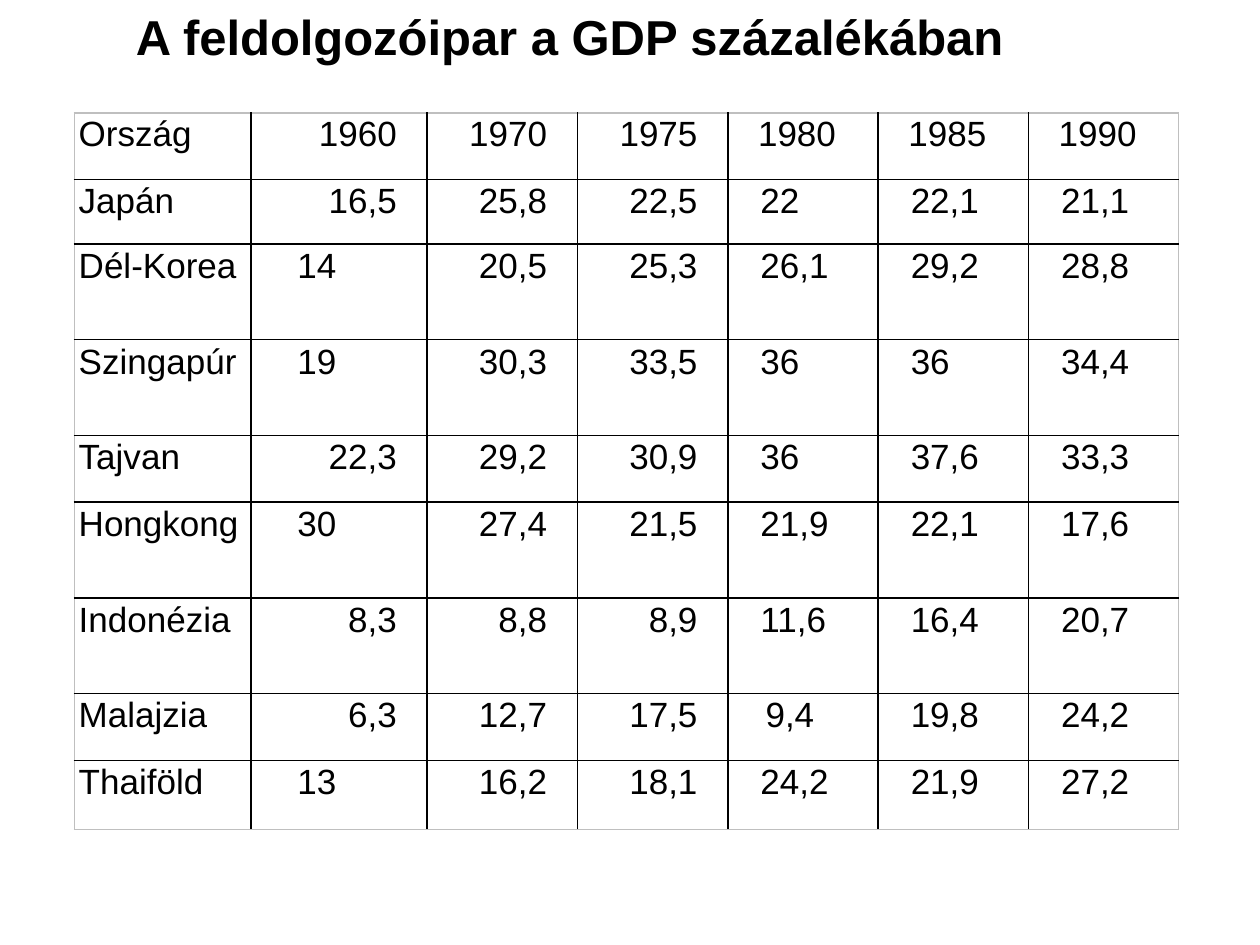
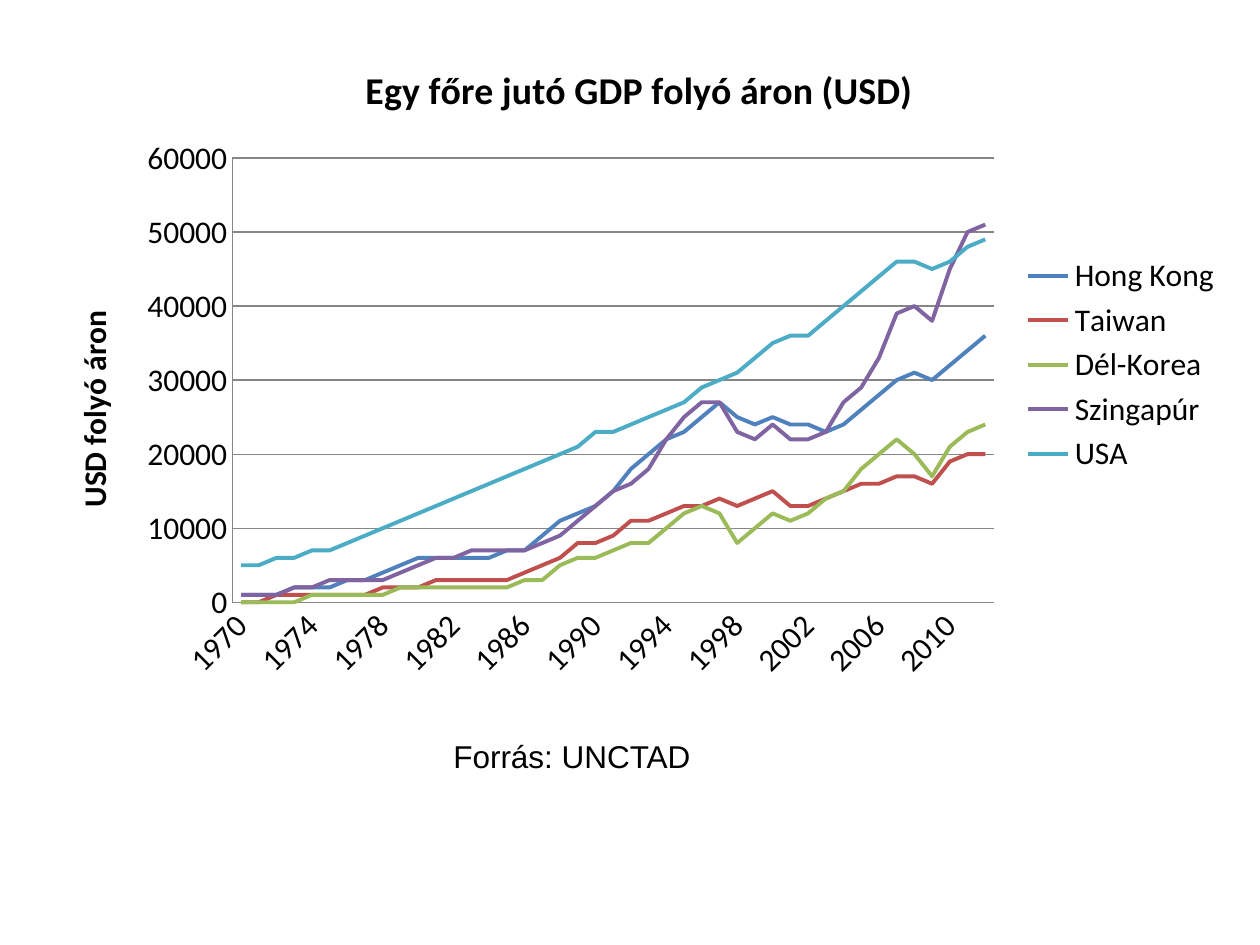
import pptx
import pptx.chart.data
import pptx.dml.color
import pptx.enum.chart
import pptx.enum.text
import pptx.oxml
import pptx.oxml.ns
import pptx.util

Pt = pptx.util.Pt
ALIGN = pptx.enum.text.PP_ALIGN
ANCHOR = pptx.enum.text.MSO_ANCHOR
BLACK, FRAME_GRAY, AXIS_GRAY = "000000", "BFBFBF", "868686"
NS = pptx.oxml.ns.nsdecls("a", "c")


def color(hex_string):
    return pptx.dml.color.RGBColor.from_string(hex_string)


def style_font(font, size, bold=False, name="Arial"):
    font.name, font.size, font.bold = name, Pt(size), bold
    font.color.rgb = color(BLACK)


presentation = pptx.Presentation()
presentation.slide_width, presentation.slide_height = Pt(720), Pt(540)

# Slide 1: manufacturing share table
share_slide = presentation.slides.add_slide(presentation.slide_layouts[5])
heading = share_slide.shapes.title
heading.left, heading.top, heading.width, heading.height = Pt(70.5), Pt(0), Pt(595.5), Pt(41)
heading.text_frame.text = "A feldolgozóipar a GDP százalékában"
heading.text_frame.vertical_anchor = ANCHOR.TOP
heading.text_frame.auto_size = pptx.enum.text.MSO_AUTO_SIZE.SHAPE_TO_FIT_TEXT
heading.text_frame.paragraphs[0].alignment = ALIGN.LEFT
style_font(heading.text_frame.paragraphs[0].runs[0].font, 28, True)

shares = [
    ["Ország", "1960", "1970", "1975", "1980", "1985", "1990"],
    ["Japán", "16,5", "25,8", "22,5", "22", "22,1", "21,1"],
    ["Dél-Korea", "14", "20,5", "25,3", "26,1", "29,2", "28,8"],
    ["Szingapúr", "19", "30,3", "33,5", "36", "36", "34,4"],
    ["Tajvan", "22,3", "29,2", "30,9", "36", "37,6", "33,3"],
    ["Hongkong", "30", "27,4", "21,5", "21,9", "22,1", "17,6"],
    ["Indonézia", "8,3", "8,8", "8,9", "11,6", "16,4", "20,7"],
    ["Malajzia", "6,3", "12,7", "17,5", "9,4", "19,8", "24,2"],
    ["Thaiföld", "13", "16,2", "18,1", "24,2", "21,9", "27,2"],
]
column_widths = [100.8] * 2 + [85.9] * 5
row_heights = [38.2, 36.7, 54.7, 54.7, 38.2, 54.7, 54.7, 38.2, 39.6]
last_row, last_column = len(shares) - 1, len(column_widths) - 1
share_table = share_slide.shapes.add_table(
    len(shares), len(column_widths), Pt(42.5), Pt(64.5),
    Pt(sum(column_widths)), Pt(sum(row_heights))).table
share_table.first_row = share_table.horz_banding = False
for column, width in zip(share_table.columns, column_widths):
    column.width = Pt(width)

for r, (height, values) in enumerate(zip(row_heights, shares)):
    share_table.rows[r].height = Pt(height)
    for c, value in enumerate(values):
        cell = share_table.cell(r, c)
        cell.text_frame.text = value
        paragraph = cell.text_frame.paragraphs[0]
        style_font(paragraph.runs[0].font, 20)
        cell.vertical_anchor = ANCHOR.TOP
        cell.margin_left = cell.margin_right = cell.margin_bottom = Pt(0)
        cell.margin_top = Pt(1 if r < 2 else 1.6)

        # Whole numbers of 1960 and all later years are indented from the left
        if c == 0:
            cell.margin_left = Pt(2.5)
        elif c == 1 and r > 0 and "," not in value:
            cell.margin_left = Pt(26.6)
        elif c <= 3:
            paragraph.alignment = ALIGN.RIGHT
            cell.margin_right = Pt(17.3)
        elif r == 0:
            cell.margin_left = Pt(17.3)
        else:
            cell.margin_left = Pt(21.6 if value == "9,4" else 18.7)

        # Black inner rules, gray outer frame
        properties = cell._tc.get_or_add_tcPr()
        outer_edges = {"L": c == 0, "R": c == last_column, "T": r == 0, "B": r == last_row}
        for side, is_outer in outer_edges.items():
            properties.append(pptx.oxml.parse_xml(
                f'<a:ln{side} {NS} w="12700"><a:solidFill>'
                f'<a:srgbClr val="{FRAME_GRAY if is_outer else BLACK}"/>'
                f'</a:solidFill></a:ln{side}>'))
        cell.fill.background()

# Slide 2: GDP per capita chart, values in thousands of USD
gdp_slide = presentation.slides.add_slide(presentation.slide_layouts[6])
gdp_series = [
    ("Hong Kong", "4F81BD",
     [1, 1, 1, 2, 2, 2, 3, 3, 4, 5, 6, 6, 6, 6, 6, 7, 7, 9, 11, 12, 13, 15, 18, 20, 22, 23,
      25, 27, 25, 24, 25, 24, 24, 23, 24, 26, 28, 30, 31, 30, 32, 34, 36]),
    ("Taiwan", "C0504D",
     [0, 0, 1, 1, 1, 1, 1, 1, 2, 2, 2, 3, 3, 3, 3, 3, 4, 5, 6, 8, 8, 9, 11, 11, 12, 13,
      13, 14, 13, 14, 15, 13, 13, 14, 15, 16, 16, 17, 17, 16, 19, 20, 20]),
    ("Dél-Korea", "9BBB59",
     [0, 0, 0, 0, 1, 1, 1, 1, 1, 2, 2, 2, 2, 2, 2, 2, 3, 3, 5, 6, 6, 7, 8, 8, 10, 12,
      13, 12, 8, 10, 12, 11, 12, 14, 15, 18, 20, 22, 20, 17, 21, 23, 24]),
    ("Szingapúr", "8064A2",
     [1, 1, 1, 2, 2, 3, 3, 3, 3, 4, 5, 6, 6, 7, 7, 7, 7, 8, 9, 11, 13, 15, 16, 18, 22, 25,
      27, 27, 23, 22, 24, 22, 22, 23, 27, 29, 33, 39, 40, 38, 45, 50, 51]),
    ("USA", "4BACC6",
     [5, 5, 6, 6, 7, 7, 8, 9, 10, 11, 12, 13, 14, 15, 16, 17, 18, 19, 20, 21, 23, 23, 24, 25,
      26, 27, 29, 30, 31, 33, 35, 36, 36, 38, 40, 42, 44, 46, 46, 45, 46, 48, 49]),
]
gdp_data = pptx.chart.data.CategoryChartData(number_format="General")
gdp_data.categories = [str(year) for year in range(1970, 2013)]
for country, _, thousands in gdp_series:
    gdp_data.add_series(country, [value * 1000 for value in thousands])
gdp_chart = gdp_slide.shapes.add_chart(
    pptx.enum.chart.XL_CHART_TYPE.LINE, Pt(25.2), Pt(20.9), Pt(680.4), Pt(375.1), gdp_data).chart
style_font(gdp_chart.font, 18, name="Calibri")
gdp_chart.plots[0].vary_by_categories = False
for series, (_, line_color, _) in zip(gdp_chart.plots[0].series, gdp_series):
    series.smooth = False
    series.marker.style = pptx.enum.chart.XL_MARKER_STYLE.NONE
    series.format.line.width = Pt(2.25)
    series.format.line.color.rgb = color(line_color)

# Chart title, axes and legend
years, dollars = gdp_chart.category_axis, gdp_chart.value_axis
for titled, caption, size in [(gdp_chart, "Egy főre jutó GDP folyó áron (USD)", 21.6),
                              (dollars, "USD folyó áron", 18)]:
    titled.has_title = True
    title_frame = (gdp_chart.chart_title if titled is gdp_chart else dollars.axis_title).text_frame
    title_frame.text = caption
    style_font(title_frame.paragraphs[0].runs[0].font, size, True, "Calibri")
dollars.minimum_scale, dollars.maximum_scale, dollars.major_unit = 0, 60000, 10000
dollars.has_major_gridlines = True
for axis in (years, dollars):
    axis.major_tick_mark = axis.minor_tick_mark = pptx.enum.chart.XL_TICK_MARK.NONE
    style_font(axis.tick_labels.font, 18, name="Calibri")
for line in (years.format.line, dollars.format.line, dollars.major_gridlines.format.line):
    line.width = Pt(0.75)
    line.color.rgb = color(AXIS_GRAY)
gdp_chart.has_legend = True
gdp_chart.legend.position = pptx.enum.chart.XL_LEGEND_POSITION.RIGHT
gdp_chart.legend.include_in_layout = False
style_font(gdp_chart.legend.font, 18, name="Calibri")

# Every fourth year, slanted; fixed plot area
chart_xml = gdp_chart._chartSpace
chart_xml.xpath(".//c:catAx/c:txPr/a:bodyPr")[0].set("rot", "-2700000")
chart_xml.xpath(".//c:catAx/c:noMultiLvlLbl")[0].addprevious(
    pptx.oxml.parse_xml(f'<c:tickLblSkip {NS} val="4"/>'))
plot_area = chart_xml.xpath(".//c:plotArea")[0]
for layout in plot_area.xpath("./c:layout"):
    plot_area.remove(layout)
plot_area.insert(0, pptx.oxml.parse_xml(
    f'<c:layout {NS}><c:manualLayout><c:layoutTarget val="inner"/>'
    '<c:xMode val="edge"/><c:yMode val="edge"/><c:x val="0.158"/><c:y val="0.185"/>'
    '<c:w val="0.64"/><c:h val="0.677"/></c:manualLayout></c:layout>'))

# Source line
source = gdp_slide.shapes.add_textbox(Pt(252), Pt(417.6), Pt(162.7), Pt(28.8)).text_frame
source.word_wrap = True
source.auto_size = pptx.enum.text.MSO_AUTO_SIZE.SHAPE_TO_FIT_TEXT
source.text = "Forrás: UNCTAD"
style_font(source.paragraphs[0].runs[0].font, 18)

presentation.save("out.pptx")
